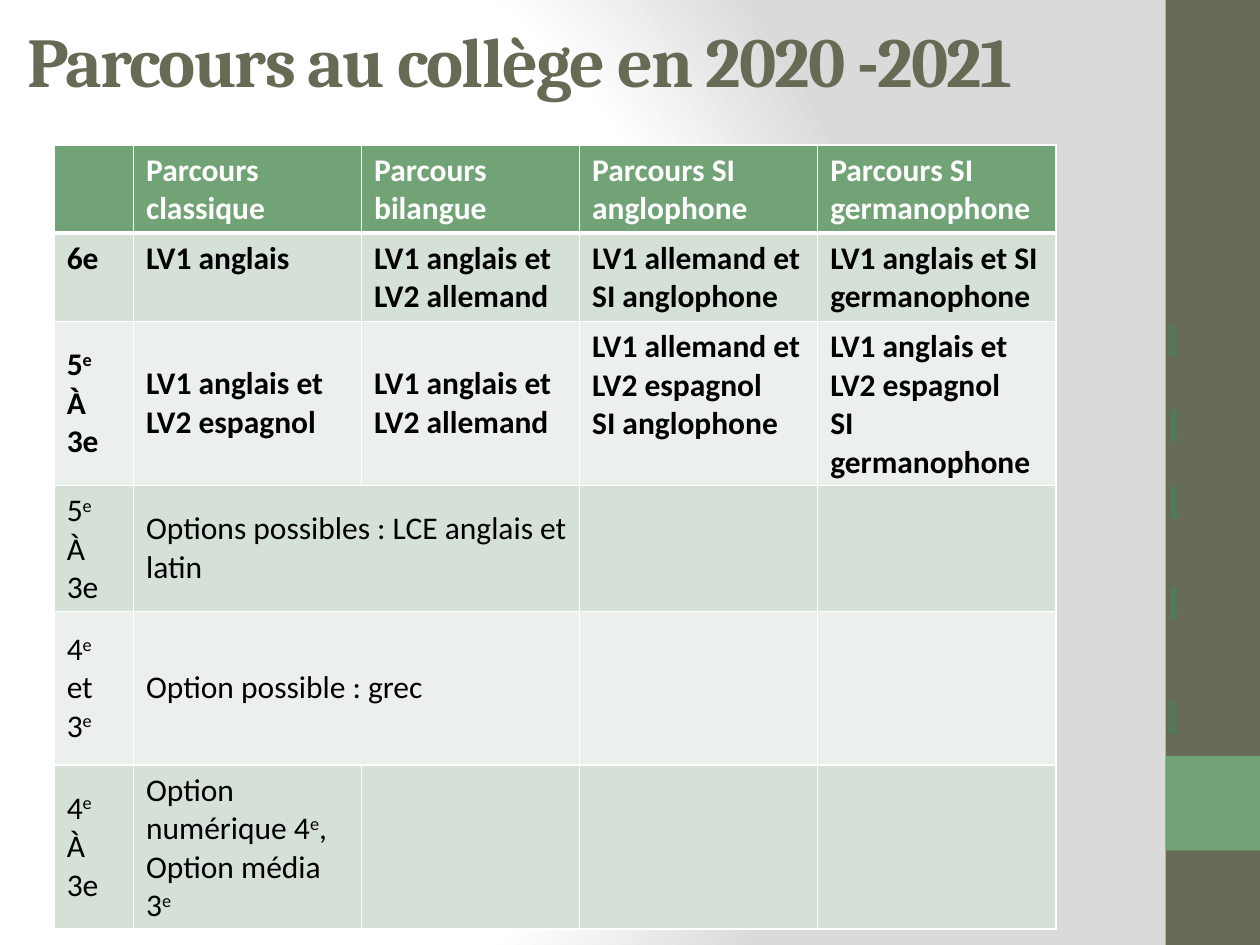
from lxml import etree
from pptx import Presentation
from pptx.dml.color import RGBColor
from pptx.enum.shapes import MSO_SHAPE as Shape
from pptx.enum.text import MSO_ANCHOR as Anchor
from pptx.oxml import parse_xml
from pptx.oxml.ns import nsdecls, qn
from pptx.util import Inches, Pt

WIDTH, HEIGHT = 10, 7.5
OLIVE, GREEN, DARK_GREEN = "676A55", "72A376", "547957"
WHITE, BLACK = "FFFFFF", "000000"
BANDS = ["D5E0D6", "EBF0EC"]

COLUMNS = [0.63, 1.81, 1.73, 1.89, 1.89]
ROWS = [0.65, 0.65, 1.22, 0.92, 1.22, 1.22]
BOLD_ROWS = 3
# "^" switches superscript on and off, a line break starts a paragraph
COURSES = [
    ["", "Parcours classique", "Parcours bilangue",
     "Parcours SI anglophone", "Parcours SI germanophone"],
    ["6e", "LV1 anglais", "LV1 anglais et LV2 allemand",
     "LV1 allemand et SI anglophone", "LV1 anglais et SI germanophone"],
    ["5^e^\nÀ\n3e", "LV1 anglais et LV2 espagnol", "LV1 anglais et LV2 allemand",
     "LV1 allemand et LV2 espagnol\nSI anglophone",
     "LV1 anglais et LV2 espagnol\nSI germanophone"],
    ["5^e^\nÀ\n3e", "Options possibles : LCE anglais et latin", "", "", ""],
    ["4^e^ et 3^e^", "Option possible : grec", "", "", ""],
    ["4^e^\nÀ\n3e", "Option numérique 4^e^, Option média 3^e^", "", "", ""],
]
WIDE_ROWS = [3, 4]
TOP_CELL = (2, 3)


def color(value):
    return RGBColor.from_string(value)


def write(frame, text, font="Calibri", size=18, ink=BLACK, bold=False,
          anchor=Anchor.TOP, spacing=None):
    frame.word_wrap = True
    frame.vertical_anchor = anchor
    for row, line in enumerate(text.split("\n")):
        para = frame.add_paragraph() if row else frame.paragraphs[0]
        para.font.size = Pt(size)
        for part, words in enumerate(line.split("^")):
            if not words:
                continue
            span = para.add_run()
            span.text = words
            span.font.name, span.font.size, span.font.bold = font, Pt(size), bold
            span.font.color.rgb = color(ink)
            if part % 2:
                span.font._element.set("baseline", "30000")
            if spacing:
                span.font._element.set("spc", str(spacing * 100))


def add_shape(page, kind, box, fill, line=None):
    shape = page.shapes.add_shape(kind, *map(Inches, box))
    shape.shadow.inherit = False
    shape.fill.solid()
    shape.fill.fore_color.rgb = color(fill)
    if line:
        shape.line.color.rgb = color(line)
        shape.line.width = Pt(2)
    else:
        shape.line.fill.background()


def add_background(page):
    page.background.fill.solid()
    holder = page.element.find(".//" + qn("p:bgPr"))
    stops = "".join(
        f'<a:gs pos="{share * 1000}"><a:srgbClr val="{ink}"/></a:gs>'
        for share, ink in [(0, WHITE), (75, WHITE), (100, "DADADA")])
    holder.replace(holder[0], parse_xml(
        f'<a:gradFill {nsdecls("a")} rotWithShape="1"><a:gsLst>{stops}</a:gsLst>'
        '<a:path path="circle"><a:fillToRect l="20000" t="50000" r="100000" b="50000"/>'
        '</a:path></a:gradFill>'))


def add_side_band(page, box):
    left, top, width, height = box
    add_shape(page, Shape.RECTANGLE, box, OLIVE)
    add_shape(page, Shape.RECTANGLE, (left, top + 0.8 * height, width, width), GREEN)
    for offset, arrow_top in [(0.04, 3.26), (0.04, 3.87), (0.04, 4.67),
                              (0.03, 5.58), (0.03, 2.59)]:
        add_shape(page, Shape.DOWN_ARROW,
                  (left + offset, top + arrow_top, 0.05, 0.24), GREEN, DARK_GREEN)


def add_title(page, box):
    frame = page.shapes.add_textbox(*map(Inches, box)).text_frame
    write(frame, "Parcours au collège en 2020 -2021", font="Cambria", size=40,
          ink=OLIVE, bold=True, anchor=Anchor.MIDDLE, spacing=-1)


def set_borders(cell, bottom):
    props = cell._tc.get_or_add_tcPr()
    for place, (side, width) in enumerate(
            [("L", 1), ("R", 1), ("T", 1), ("B", bottom)]):
        line = etree.Element(qn(f"a:ln{side}"), w=str(Pt(width)))
        fill = etree.SubElement(line, qn("a:solidFill"))
        etree.SubElement(fill, qn("a:srgbClr"), val=WHITE)
        props.insert(place, line)


def add_courses(page, box):
    table = page.shapes.add_table(len(ROWS), len(COLUMNS), *map(Inches, box)).table
    for column, width in zip(table.columns, COLUMNS):
        column.width = Inches(width)
    for row, height in zip(table.rows, ROWS):
        row.height = Inches(height)
    for row in WIDE_ROWS:
        table.cell(row, 1).merge(table.cell(row, 2))
    for row, texts in enumerate(COURSES):
        header = row == 0
        for col, text in enumerate(texts):
            cell = table.cell(row, col)
            cell.fill.solid()
            cell.fill.fore_color.rgb = color(GREEN if header else BANDS[(row - 1) % 2])
            set_borders(cell, bottom=3 if header else 1)
            write(cell.text_frame, text, ink=WHITE if header else BLACK,
                  bold=row < BOLD_ROWS)
            middle = row > 1 and (row, col) != TOP_CELL
            cell.vertical_anchor = Anchor.MIDDLE if middle else Anchor.TOP


def main():
    deck = Presentation()
    deck.slide_width, deck.slide_height = Inches(WIDTH), Inches(HEIGHT)
    page = deck.slides.add_slide(deck.slide_layouts[6])
    add_background(page)
    add_side_band(page, (0.925 * WIDTH, 0, 0.075 * WIDTH, HEIGHT))
    add_title(page, (0.12, 0.01, 8.72, 0.93))
    add_courses(page, (0.43, 1.15, sum(COLUMNS), sum(ROWS)))
    deck.save("out.pptx")


if __name__ == "__main__":
    main()
